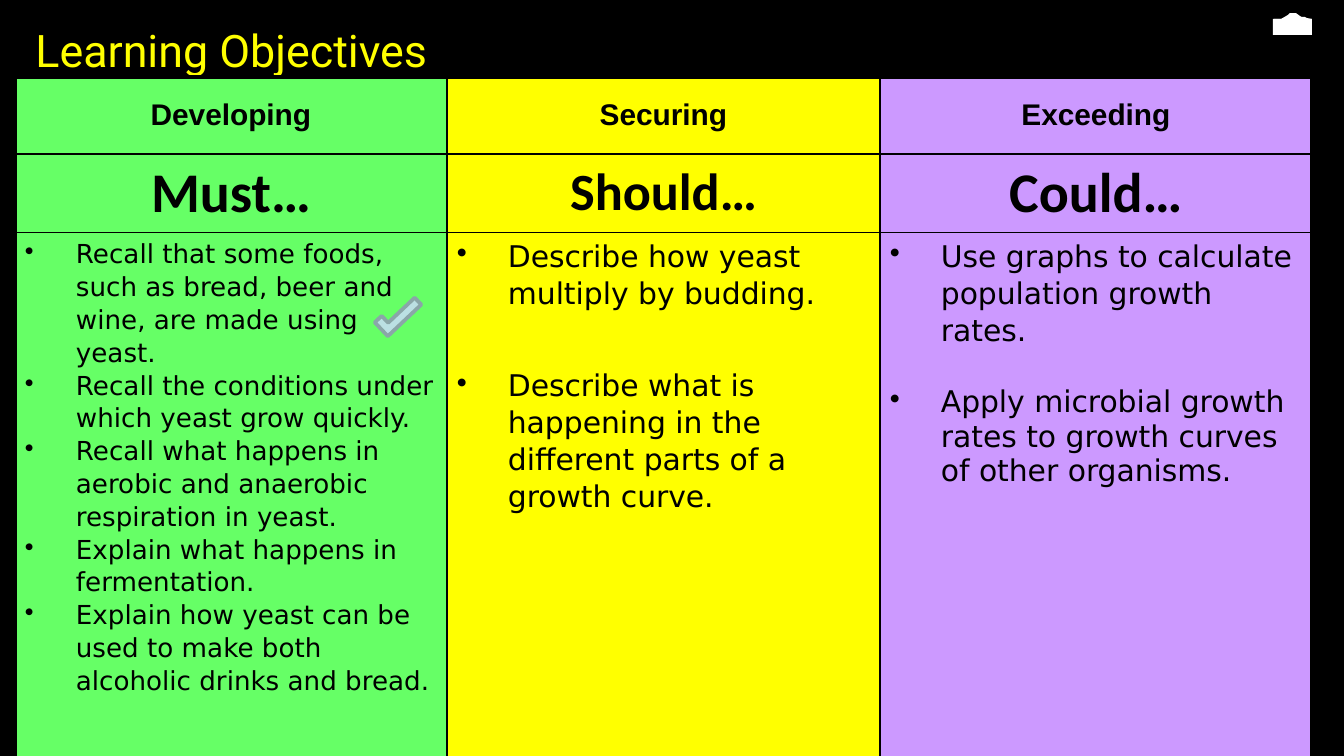
from dataclasses import dataclass

from lxml import etree
from pptx import Presentation
from pptx import util as u
from pptx.dml.color import RGBColor
from pptx.enum import shapes, text
from pptx.oxml import ns

EMU_PER_PX = 914400 / 134.4

BLACK = RGBColor(0x00, 0x00, 0x00)
WHITE = RGBColor(0xFF, 0xFF, 0xFF)
YELLOW = RGBColor(0xFF, 0xFF, 0x00)
GREEN = RGBColor(0x66, 0xFF, 0x66)
PURPLE = RGBColor(0xCC, 0x99, 0xFF)
PALE_BLUE = RGBColor(0xBB, 0xE0, 0xE3)
GREY_BLUE = RGBColor(0x8A, 0xA6, 0xA8)

COLUMN_WIDTHS = (432, 433, 432)
ROW_HEIGHTS = (77, 77, 527)
BULLET_INDENT = 51
INNER_BORDER, OUTER_BORDER = 1, 2.25


@dataclass(frozen=True)
class Objective:
    wording: str
    line_spacing: float = 1.07
    gap_before: int = 0


@dataclass(frozen=True)
class Level:
    name: str
    priority: str
    priority_size: int
    colour: RGBColor
    objective_size: int
    objectives: tuple[Objective, ...]


LEVELS = (
    Level("Developing", "Must…", 30, GREEN, 14, (
        Objective("Recall that some foods, such as bread, beer and wine, are made using yeast."),
        Objective("Recall the conditions under which yeast grow quickly."),
        Objective("Recall what happens in aerobic and anaerobic respiration in yeast."),
        Objective("Explain what happens in fermentation."),
        Objective("Explain how yeast can be used to make both alcoholic drinks and bread."),
    )),
    Level("Securing", "Should…", 28, YELLOW, 16, (
        Objective("Describe how yeast multiply by budding."),
        Objective("Describe what is happening in the different parts of a growth curve.",
                  gap_before=30),
    )),
    Level("Exceeding", "Could…", 30, PURPLE, 16, (
        Objective("Use graphs to calculate population growth rates."),
        Objective("Apply microbial growth rates to growth curves of other organisms.",
                  line_spacing=1.0, gap_before=20),
    )),
)


def px(length: int) -> u.Emu:
    return u.Emu(round(length * EMU_PER_PX))


def box(*lengths: int) -> list[u.Emu]:
    return [px(length) for length in lengths]


def apply_format(target, values: dict) -> None:
    for attribute, value in values.items():
        setattr(target, attribute, value)


def write(paragraph, wording: str, font: str, size: int,
          colour: RGBColor = BLACK, bold: bool = False) -> None:
    run = paragraph.add_run()
    run.text = wording
    apply_format(run.font, {"name": font, "size": u.Pt(size), "bold": bold})
    run.font.color.rgb = colour


def add_bullet(paragraph) -> None:
    properties = paragraph._p.get_or_add_pPr()
    properties.set("marL", str(px(BULLET_INDENT)))
    properties.set("indent", str(-px(BULLET_INDENT)))
    etree.SubElement(properties, ns.qn("a:buChar")).set("char", "•")


def add_borders(cell, row: int, column: int) -> None:
    """Draw the four edges, thicker where the cell meets the table's outside."""
    outside = {
        "a:lnL": column == 0,
        "a:lnR": column == len(COLUMN_WIDTHS) - 1,
        "a:lnT": row == 0,
        "a:lnB": row == len(ROW_HEIGHTS) - 1,
    }
    properties = cell._tc.get_or_add_tcPr()
    for edge, is_outside in outside.items():
        width = u.Pt(OUTER_BORDER if is_outside else INNER_BORDER)
        line = etree.SubElement(properties, ns.qn(edge), w=str(width))
        fill = etree.SubElement(line, ns.qn("a:solidFill"))
        etree.SubElement(fill, ns.qn("a:srgbClr"), val=str(BLACK))


def write_heading(cell, wording: str, font: str, size: int) -> None:
    cell.vertical_anchor = text.MSO_ANCHOR.MIDDLE
    paragraph = cell.text_frame.paragraphs[0]
    paragraph.alignment = text.PP_ALIGN.CENTER
    write(paragraph, wording, font, size, bold=True)


def write_objectives(cell, level: Level) -> None:
    frame = cell.text_frame
    for index, objective in enumerate(level.objectives):
        paragraph = frame.add_paragraph() if index else frame.paragraphs[0]
        apply_format(paragraph, {
            "line_spacing": objective.line_spacing,
            "space_before": u.Pt(objective.gap_before),
        })
        add_bullet(paragraph)
        write(paragraph, objective.wording, "DejaVu Sans", level.objective_size)


def add_title(slide) -> None:
    title = slide.shapes.title
    left, top, width, height = box(22, 16, 965, 122)
    apply_format(title, {"left": left, "top": top, "width": width, "height": height})
    apply_format(title.text_frame, {
        "vertical_anchor": text.MSO_ANCHOR.TOP,
        "auto_size": text.MSO_AUTO_SIZE.NONE,
        "word_wrap": True,
    })
    paragraph = title.text_frame.paragraphs[0]
    paragraph.alignment = text.PP_ALIGN.LEFT
    write(paragraph, "Learning Objectives", "Roboto", 24, YELLOW)


def add_objectives_table(slide) -> None:
    table = slide.shapes.add_table(
        len(ROW_HEIGHTS), len(LEVELS),
        *box(15, 77, sum(COLUMN_WIDTHS), sum(ROW_HEIGHTS))).table
    apply_format(table, {"first_row": False, "horz_banding": False})
    for row, height in zip(table.rows, ROW_HEIGHTS):
        row.height = px(height)

    for column, (level, width) in enumerate(zip(LEVELS, COLUMN_WIDTHS)):
        table.columns[column].width = px(width)
        cells = [table.cell(row, column) for row in range(len(ROW_HEIGHTS))]
        for row, cell in enumerate(cells):
            apply_format(cell, {
                "margin_left": px(10), "margin_right": px(10),
                "margin_top": px(5), "margin_bottom": px(5),
            })
            add_borders(cell, row, column)
            cell.fill.solid()
            cell.fill.fore_color.rgb = level.colour
        name_cell, priority_cell, objectives_cell = cells
        write_heading(name_cell, level.name, "Arial", 16)
        write_heading(priority_cell, level.priority, "Calibri", level.priority_size)
        write_objectives(objectives_cell, level)


def paint(shape, fill: RGBColor, outline: RGBColor | None = None) -> None:
    shape.shadow.inherit = False
    shape.fill.solid()
    shape.fill.fore_color.rgb = fill
    if outline is None:
        shape.line.fill.background()
    else:
        shape.line.color.rgb = outline
        shape.line.width = u.Pt(2)


def add_corner_emblem(slide) -> None:
    emblem = slide.shapes.add_group_shape().shapes
    base = emblem.add_shape(shapes.MSO_SHAPE.RECTANGLE, *box(1273, 19, 39, 16))
    outline = emblem.build_freeform(1274, 19, scale=EMU_PER_PX)
    outline.add_line_segments([
        (1281, 19), (1288, 15), (1290, 13), (1296, 13), (1300, 16),
        (1302, 17), (1305, 17), (1307, 18), (1312, 19),
    ])
    for part in (base, outline.convert_to_shape()):
        paint(part, WHITE)


def add_tick(slide) -> None:
    l_shape = shapes.MSO_SHAPE.from_xml("corner")
    tick = slide.shapes.add_shape(l_shape, *box(375, 304, 46, 19))
    tick.rotation = 316.6
    paint(tick, PALE_BLUE, GREY_BLUE)


def main() -> None:
    deck = Presentation()
    deck.slide_width, deck.slide_height = box(1344, 756)
    title_only = deck.slide_layouts[5]
    slide = deck.slides.add_slide(title_only)
    slide.background.fill.solid()
    slide.background.fill.fore_color.rgb = BLACK
    add_title(slide)
    add_objectives_table(slide)
    add_corner_emblem(slide)
    add_tick(slide)
    deck.save("out.pptx")


if __name__ == "__main__":
    main()
